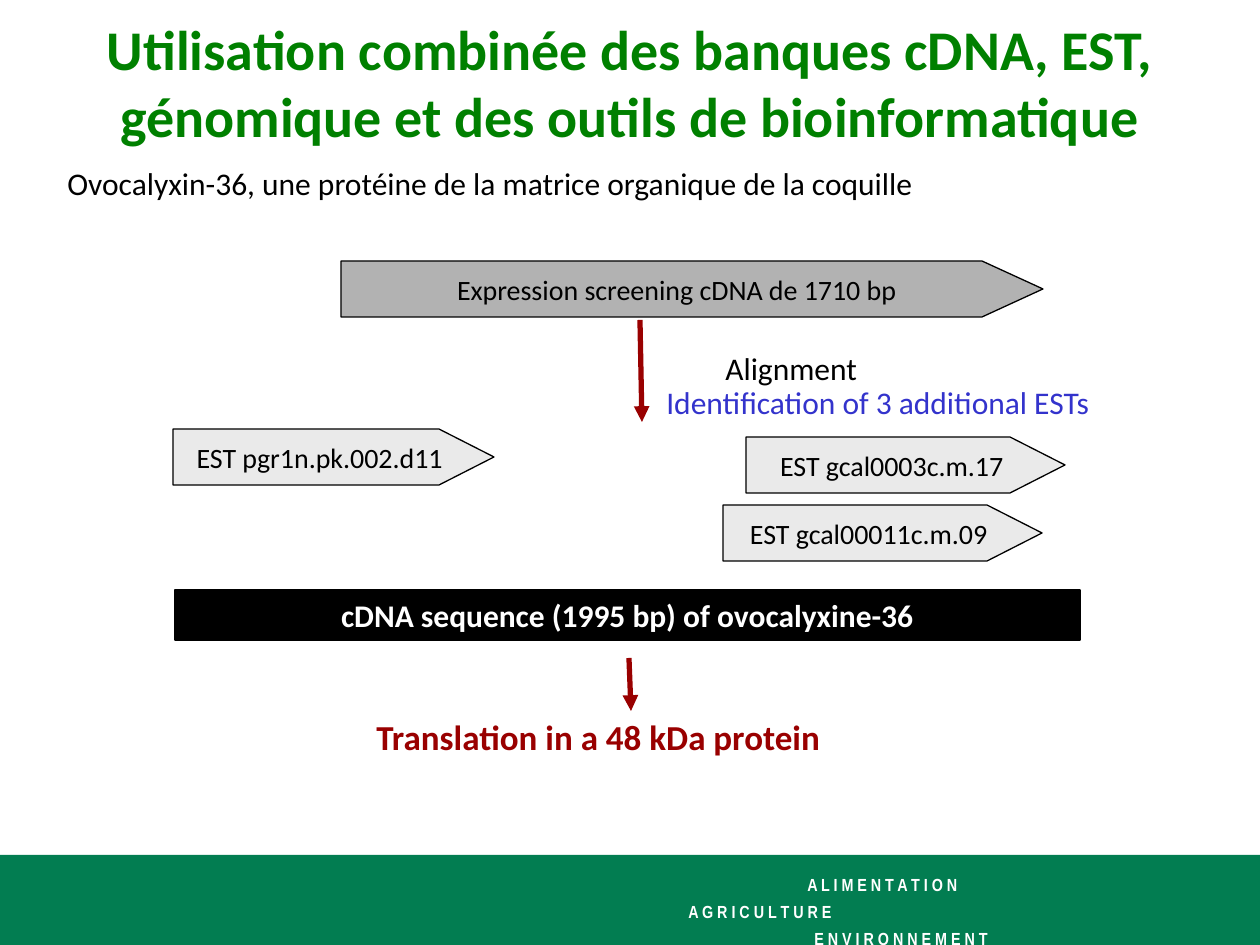
"""Build the slide on ovocalyxin-36 cDNA assembly."""
from typing import NamedTuple

from lxml.etree import SubElement
from pptx import Presentation
from pptx.dml.color import RGBColor
from pptx.enum.shapes import MSO_CONNECTOR, MSO_SHAPE
from pptx.enum.text import MSO_ANCHOR, PP_ALIGN
from pptx.oxml.ns import qn
from pptx.util import Emu, Pt

PX_PER_INCH = 126
COLORS = {
    "title": "008000", "band": "027D51", "white": "FFFFFF", "black": "000000",
    "cdna": "B2B2B2", "est": "EAEAEA", "blue": "3333CC", "red": "990000",
}


class Box(NamedTuple):
    left: int
    top: int
    width: int
    height: int


class Style(NamedTuple):
    size: int
    color: str = "black"
    bold: bool = False
    font: str = "Calibri"


class Block(NamedTuple):
    text: str
    box: Box
    fill: str
    style: Style
    tip: int = 0


class Label(NamedTuple):
    text: str
    box: Box
    style: Style


class Arrow(NamedTuple):
    x1: int
    y1: int
    x2: int
    y2: int


class FooterLine(NamedTuple):
    text: str
    indent: int


BLOCKS = [
    Block("Expression screening cDNA de 1710 bp", Box(341, 261, 702, 56), "cdna", Style(16), 61),
    Block("EST pgr1n.pk.002.d11", Box(173, 429, 321, 56), "est", Style(16), 55),
    Block("EST gcal0003c.m.17", Box(746, 437, 319, 56), "est", Style(16), 55),
    Block("EST gcal00011c.m.09", Box(723, 505, 319, 56), "est", Style(16), 55),
    Block("cDNA sequence (1995 bp) of ovocalyxine-36", Box(175, 590, 905, 50), "black",
          Style(18, "white", True)),
]
LABELS = [
    Label("Alignment", Box(713, 343, 157, 50), Style(18)),
    Label("Identification of 3 additional ESTs", Box(654, 377, 454, 50), Style(18, "blue")),
    Label("Translation in a 48 kDa protein", Box(364, 709, 473, 54), Style(20, "red", True)),
    Label("Ovocalyxin-36, une protéine de la matrice organique de la coquille",
          Box(55, 158, 882, 50), Style(18)),
]
ARROWS = [Arrow(640, 320, 642, 422), Arrow(629, 658, 631, 711)]
TITLE = Label("Utilisation combinée des banques cDNA, EST, génomique et des outils de bioinformatique",
              Box(0, 8, 1260, 147), Style(32, "title", True))
BAND = Box(0, 855, 1260, 90)
FOOTER_BOX = Box(669, 861, 431, 94)
FOOTER_STYLE = Style(10, "white", True, "Arial Narrow")
FOOTER = [
    FooterLine("A L I M E N T A T I O N", 126),
    FooterLine("A G R I C U L T U R E", 7),
    FooterLine("E N V I R O N N E M E N T", 133),
]


def px(length: int) -> Emu:
    return Emu(round(length * 914400 / PX_PER_INCH))


def rgb(name: str) -> RGBColor:
    return RGBColor.from_string(COLORS[name])


def format_para(para, style: Style, align=PP_ALIGN.LEFT) -> None:
    para.alignment = align
    for span in para.runs:
        span.font.name = style.font
        span.font.size = Pt(style.size)
        span.font.bold = style.bold
        span.font.color.rgb = rgb(style.color)


def add_filled(page, preset, box: Box, fill: str):
    shape = page.shapes.add_shape(preset, *map(px, box))
    shape.shadow.inherit = False
    shape.fill.solid()
    shape.fill.fore_color.rgb = rgb(fill)
    return shape


def add_block(page, block: Block) -> None:
    preset = MSO_SHAPE.PENTAGON if block.tip else MSO_SHAPE.RECTANGLE
    shape = add_filled(page, preset, block.box, block.fill)
    if block.tip:
        shape.adjustments[0] = block.tip / block.box.height
    shape.line.color.rgb = rgb("black")
    shape.line.width = Pt(0.75)
    frame = shape.text_frame
    frame.text = block.text
    frame.word_wrap = False
    frame.vertical_anchor = MSO_ANCHOR.MIDDLE
    format_para(frame.paragraphs[0], block.style, PP_ALIGN.CENTER)


def add_label(page, label: Label) -> None:
    frame = page.shapes.add_textbox(*map(px, label.box)).text_frame
    frame.text = label.text
    frame.word_wrap = False
    format_para(frame.paragraphs[0], label.style)


def add_arrow(page, arrow: Arrow) -> None:
    connector = page.shapes.add_connector(MSO_CONNECTOR.STRAIGHT, *map(px, arrow))
    connector.line.color.rgb = rgb("red")
    connector.line.width = Pt(3)
    SubElement(connector.line._get_or_add_ln(), qn("a:tailEnd"), type="triangle")
    SubElement(connector._element.spPr, qn("a:effectLst"))


def set_title(page, label: Label) -> None:
    title = page.shapes.title
    title.left, title.top, title.width, title.height = map(px, label.box)
    frame = title.text_frame
    frame.text = label.text
    frame.word_wrap = True
    frame.vertical_anchor = MSO_ANCHOR.TOP
    format_para(frame.paragraphs[0], label.style, PP_ALIGN.CENTER)


def add_footer(page) -> None:
    add_filled(page, MSO_SHAPE.RECTANGLE, BAND, "band").line.fill.background()
    frame = page.shapes.add_textbox(*map(px, FOOTER_BOX)).text_frame
    frame.word_wrap = True
    frame.text = "\n".join(line.text for line in FOOTER)
    for para, line in zip(frame.paragraphs, FOOTER):
        para._p.get_or_add_pPr().set("marL", str(px(line.indent)))
        para.line_spacing = 1.3
        format_para(para, FOOTER_STYLE)


def main() -> None:
    deck = Presentation()
    deck.slide_width, deck.slide_height = px(1260), px(945)
    page = deck.slides.add_slide(deck.slide_layouts[5])
    add_footer(page)
    set_title(page, TITLE)
    for block in BLOCKS:
        add_block(page, block)
    for label in LABELS:
        add_label(page, label)
    for arrow in ARROWS:
        add_arrow(page, arrow)
    deck.save("out.pptx")


if __name__ == "__main__":
    main()
